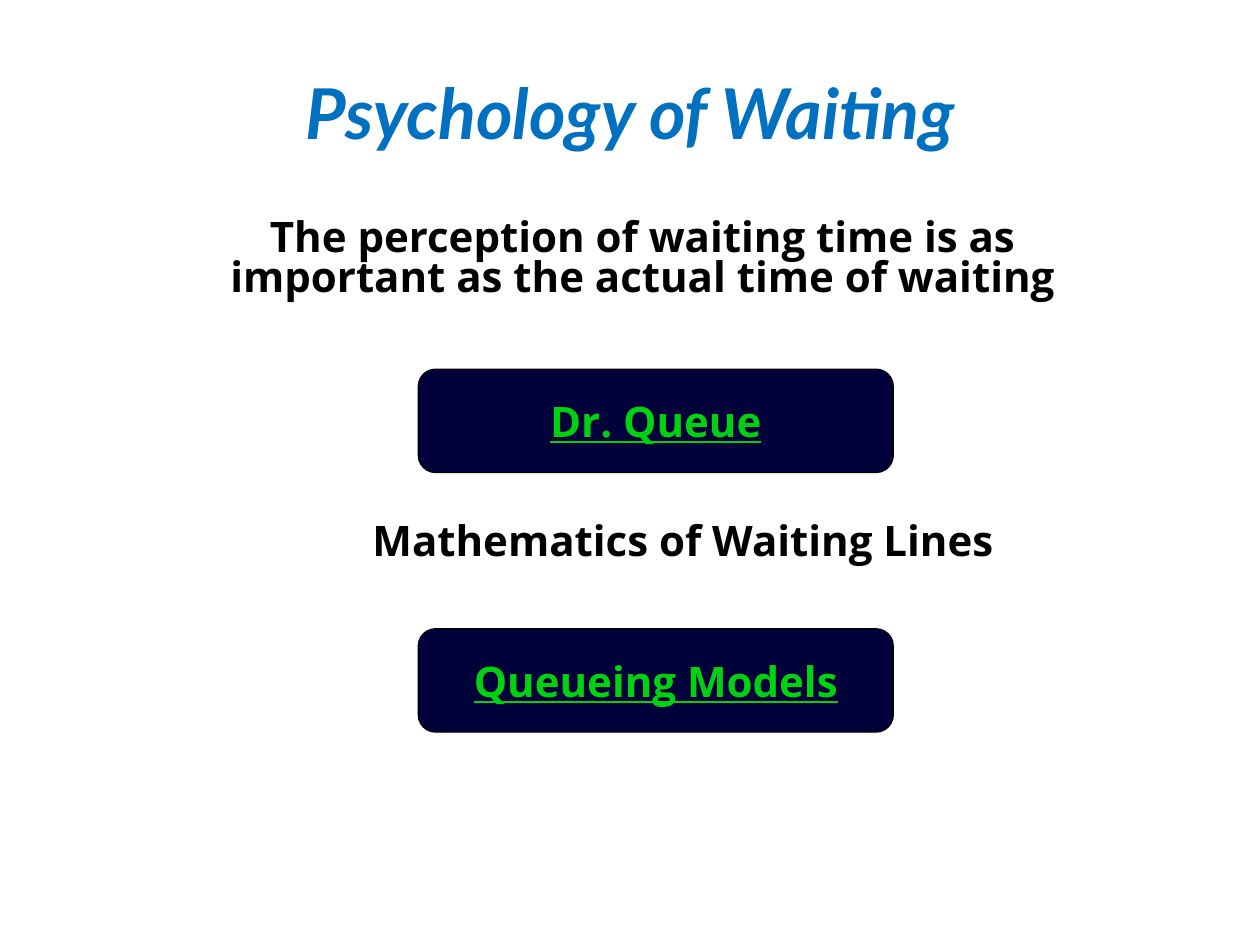
from pptx import Presentation, util as u
from pptx.dml.color import RGBColor
from pptx.enum import shapes, text

THEME = {
    "title": dict(name="Lato", size=40, color="0070C0", italic=True),
    "body": dict(name="Open Sans", size=24, color="000000"),
    "button": dict(name="Open Sans", size=24, color="00D211", underline=True),
    "fill": "00003A",
    "line": "000000",
}

TITLE = "Psychology of Waiting"
# wording, space before in points, left indent in inches
STATEMENTS = [
    ("The perception of waiting time is as important as the actual time of waiting", 0, 0),
    ("Mathematics of Waiting Lines", 128.6, 0.64),
]
BUTTONS = ["Dr. Queue", "Queueing Models"]
BUTTON_LEFT, BUTTON_TOP, BUTTON_PITCH = 3.32, 2.93, 2.06
BUTTON_SIZE = 3.77, 0.82


def style(p, name, size, color, italic=False, underline=False):
    p.alignment = text.PP_ALIGN.CENTER
    f = p.font
    f.name, f.size, f.bold = name, u.Pt(size), True
    f.italic, f.underline = italic, underline
    f.color.rgb = RGBColor.from_string(color)


def add_text_frame(s, box, anchor):
    tf = s.shapes.add_textbox(*map(u.Inches, box)).text_frame
    tf.word_wrap = True
    tf.vertical_anchor = anchor
    return tf


def add_title(s):
    tf = add_text_frame(s, (0.75, 0.55, 8.5, 0.75), text.MSO_ANCHOR.MIDDLE)
    p = tf.paragraphs[0]
    p.text, p.line_spacing = TITLE, 0.9
    style(p, **THEME["title"])


def add_statements(s):
    tf = add_text_frame(s, (1.17, 1.7, 7.86, 4.96), text.MSO_ANCHOR.TOP)
    tf.margin_left = tf.margin_right = u.Inches(0.2)
    for i, (words, before, indent) in enumerate(STATEMENTS):
        p = tf.add_paragraph() if i else tf.paragraphs[0]
        p.text, p.line_spacing = words, 0.79
        p.space_before = u.Pt(before)
        style(p, **THEME["body"])
        p._p.get_or_add_pPr().set("marL", str(u.Inches(indent)))


def add_button(s, words, top):
    sp = s.shapes.add_shape(shapes.MSO_SHAPE.ROUNDED_RECTANGLE,
                            *map(u.Inches, (BUTTON_LEFT, top, *BUTTON_SIZE)))
    sp.shadow.inherit = False
    sp.fill.solid()
    sp.fill.fore_color.rgb = RGBColor.from_string(THEME["fill"])
    sp.line.color.rgb = RGBColor.from_string(THEME["line"])
    sp.line.width = u.Pt(0.75)
    tf = sp.text_frame
    tf.vertical_anchor = text.MSO_ANCHOR.MIDDLE
    p = tf.paragraphs[0]
    p.text = words
    style(p, **THEME["button"])


def main():
    prs = Presentation()
    prs.slide_width, prs.slide_height = u.Inches(10), u.Inches(7.5)
    s = prs.slides.add_slide(prs.slide_layouts[6])
    add_title(s)
    add_statements(s)
    for i, words in enumerate(BUTTONS):
        add_button(s, words, BUTTON_TOP + i * BUTTON_PITCH)
    prs.save("out.pptx")


if __name__ == "__main__":
    main()
